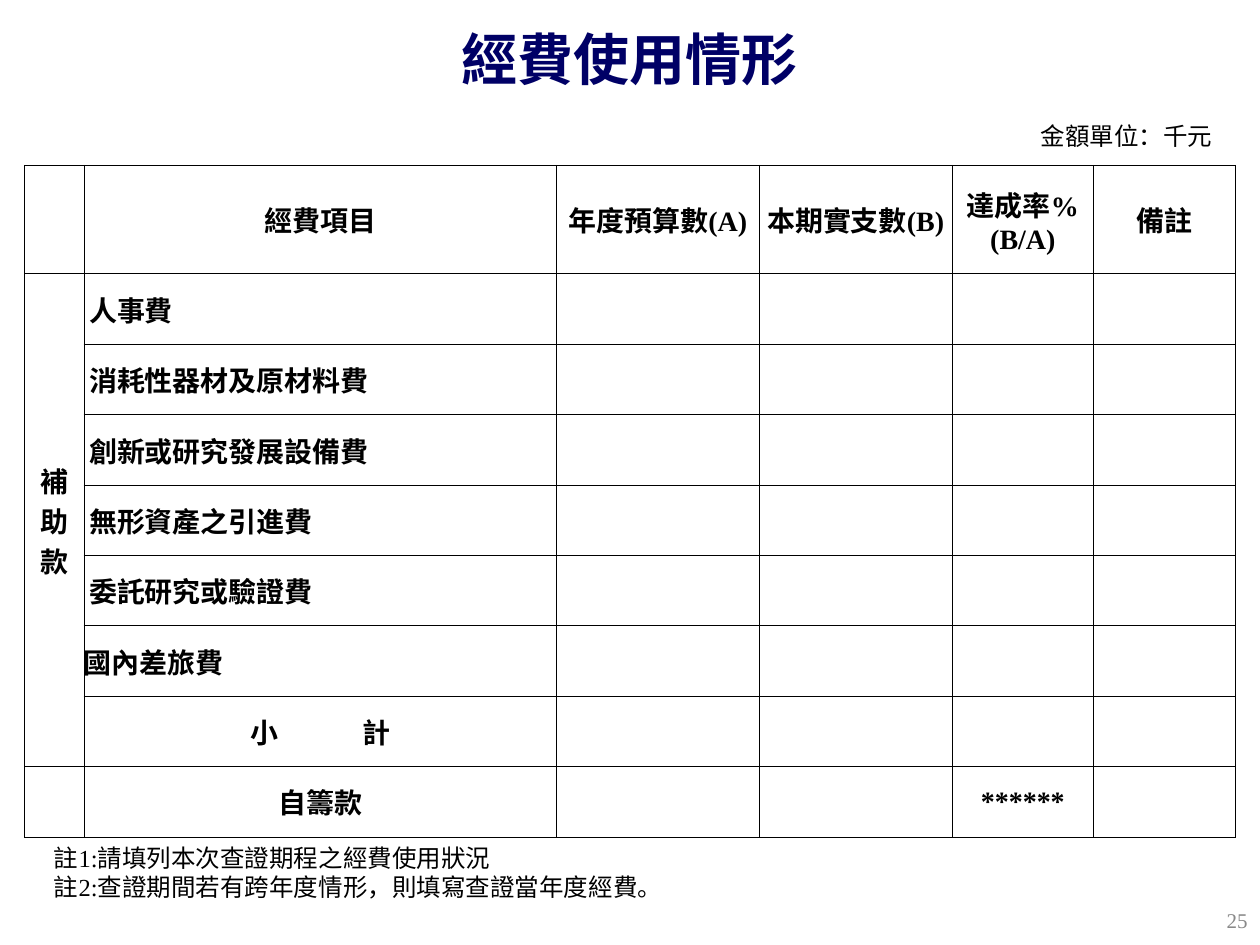
from dataclasses import dataclass

from lxml.etree import SubElement
from pptx import Presentation
from pptx.dml.color import RGBColor
from pptx.enum.text import MSO_ANCHOR, PP_ALIGN
from pptx.oxml import parse_xml
from pptx.oxml.ns import nsdecls, qn
from pptx.util import Pt

COLORS = {"title": "000066", "ink": "000000", "page": "898989"}
LATIN = "Times New Roman"
CJK = "Noto Sans CJK SC"
COLUMN_WIDTHS = [34, 270, 116, 110, 81, 81]
HEADER_HEIGHT = 62
ROW_HEIGHT = 40.25
BORDER_WIDTH = 0.5
SUBTOTAL_GAP = 48


@dataclass
class Label:
    lines: list[str]
    left: float
    top: float
    width: float
    height: float
    size: float
    color: str = "ink"
    font: str = LATIN
    align: PP_ALIGN = PP_ALIGN.LEFT
    anchor: MSO_ANCHOR = MSO_ANCHOR.TOP


@dataclass
class Entry:
    row: int
    column: int
    text: str
    align: PP_ALIGN = PP_ALIGN.CENTER
    inset: float = 0


LABELS = [
    Label(["金額單位：千元"], 575, 65.5, 125, 24.5, 14, font=CJK, align=PP_ALIGN.RIGHT),
    Label(["註1:請填列本次查證期程之經費使用狀況",
           "註2:查證期間若有跨年度情形，則填寫查證當年度經費。"],
          23.75, 478, 636, 58, 14),
    Label(["25"], 552, 511, 168, 29, 12, "page",
          align=PP_ALIGN.RIGHT, anchor=MSO_ANCHOR.MIDDLE),
]
HEADINGS = ["經費項目", "年度預算數(A)", "本期實支數(B)", "達成率%\v(B/A)", "備註"]
EXPENSES = ["人事費", "消耗性器材及原材料費", "創新或研究發展設備費",
            "無形資產之引進費", "委託研究或驗證費"]
TRAVEL_ROW = len(EXPENSES) + 1
SUBTOTAL_ROW = TRAVEL_ROW + 1
SELF_FUNDED_ROW = SUBTOTAL_ROW + 1
ENTRIES = [
    *(Entry(0, column, heading) for column, heading in enumerate(HEADINGS, 1)),
    *(Entry(row, 1, expense, PP_ALIGN.LEFT, 3) for row, expense in enumerate(EXPENSES, 1)),
    Entry(1, 0, "補助款", inset=3),
    Entry(TRAVEL_ROW, 1, "國內差旅費", PP_ALIGN.LEFT),
    Entry(SUBTOTAL_ROW, 1, "小"),
    Entry(SELF_FUNDED_ROW, 1, "自籌款"),
    Entry(SELF_FUNDED_ROW, 4, "******"),
]


def style_paragraph(paragraph, size: float, color: str, align: PP_ALIGN,
                    bold: bool = False, font: str = LATIN) -> None:
    paragraph.alignment = align
    for run in paragraph.runs:
        run.font.size = Pt(size)
        run.font.bold = bold
        run.font.name = font
        run.font.color.rgb = RGBColor.from_string(COLORS[color])
        SubElement(run.font._element, qn("a:ea")).set("typeface", CJK)


def add_label(slide, label: Label) -> None:
    box = slide.shapes.add_textbox(Pt(label.left), Pt(label.top),
                                   Pt(label.width), Pt(label.height))
    frame = box.text_frame
    frame.word_wrap = True
    frame.vertical_anchor = label.anchor
    frame.text = "\n".join(label.lines)
    for paragraph in frame.paragraphs:
        style_paragraph(paragraph, label.size, label.color, label.align, font=label.font)


def outline_cell(cell) -> None:
    cell.fill.background()
    properties = cell._tc.get_or_add_tcPr()
    for position, side in enumerate(("lnL", "lnR", "lnT", "lnB")):
        properties.insert(position, parse_xml(
            f'<a:{side} {nsdecls("a")} w="{Pt(BORDER_WIDTH)}"><a:solidFill>'
            f'<a:srgbClr val="{COLORS["ink"]}"/></a:solidFill></a:{side}>'))


def fill_entry(table, entry: Entry) -> None:
    cell = table.cell(entry.row, entry.column)
    cell.vertical_anchor = MSO_ANCHOR.MIDDLE
    cell.margin_left = cell.margin_right = Pt(entry.inset)
    cell.margin_top = cell.margin_bottom = Pt(0)
    cell.text_frame.text = entry.text
    paragraph = cell.text_frame.paragraphs[0]
    if entry.row == SUBTOTAL_ROW:
        paragraph.runs[0].font._element.set("spc", str(SUBTOTAL_GAP * 100))
        paragraph.add_run().text = "計"
    style_paragraph(paragraph, 16, "ink", entry.align, bold=True)


def add_budget_table(slide) -> None:
    heights = [HEADER_HEIGHT] + [ROW_HEIGHT] * SELF_FUNDED_ROW
    frame = slide.shapes.add_table(len(heights), len(COLUMN_WIDTHS), Pt(14), Pt(94.5),
                                   Pt(sum(COLUMN_WIDTHS)), Pt(sum(heights)))
    table = frame.table
    table.first_row = table.horz_banding = False
    for column, width in zip(table.columns, COLUMN_WIDTHS):
        column.width = Pt(width)
    for row, height in zip(table.rows, heights):
        row.height = Pt(height)
    for cell in table.iter_cells():
        outline_cell(cell)
    subsidy = table.cell(1, 0)
    subsidy.merge(table.cell(SUBTOTAL_ROW, 0))
    subsidy._tc.get_or_add_tcPr().set("vert", "eaVert")
    for entry in ENTRIES:
        fill_entry(table, entry)


def add_title(slide) -> None:
    title = slide.shapes.title
    title.left, title.top, title.width, title.height = Pt(105), Pt(4.5), Pt(510), Pt(57)
    title.text_frame.text = "經費使用情形"
    title.text_frame.vertical_anchor = MSO_ANCHOR.MIDDLE
    style_paragraph(title.text_frame.paragraphs[0], 32, "title", PP_ALIGN.CENTER, bold=True)


def main() -> None:
    presentation = Presentation()
    presentation.slide_width, presentation.slide_height = Pt(720), Pt(540)
    slide = presentation.slides.add_slide(presentation.slide_layouts.get_by_name("Title Only"))
    add_title(slide)
    for label in LABELS:
        add_label(slide, label)
    add_budget_table(slide)
    presentation.save("out.pptx")


if __name__ == "__main__":
    main()
